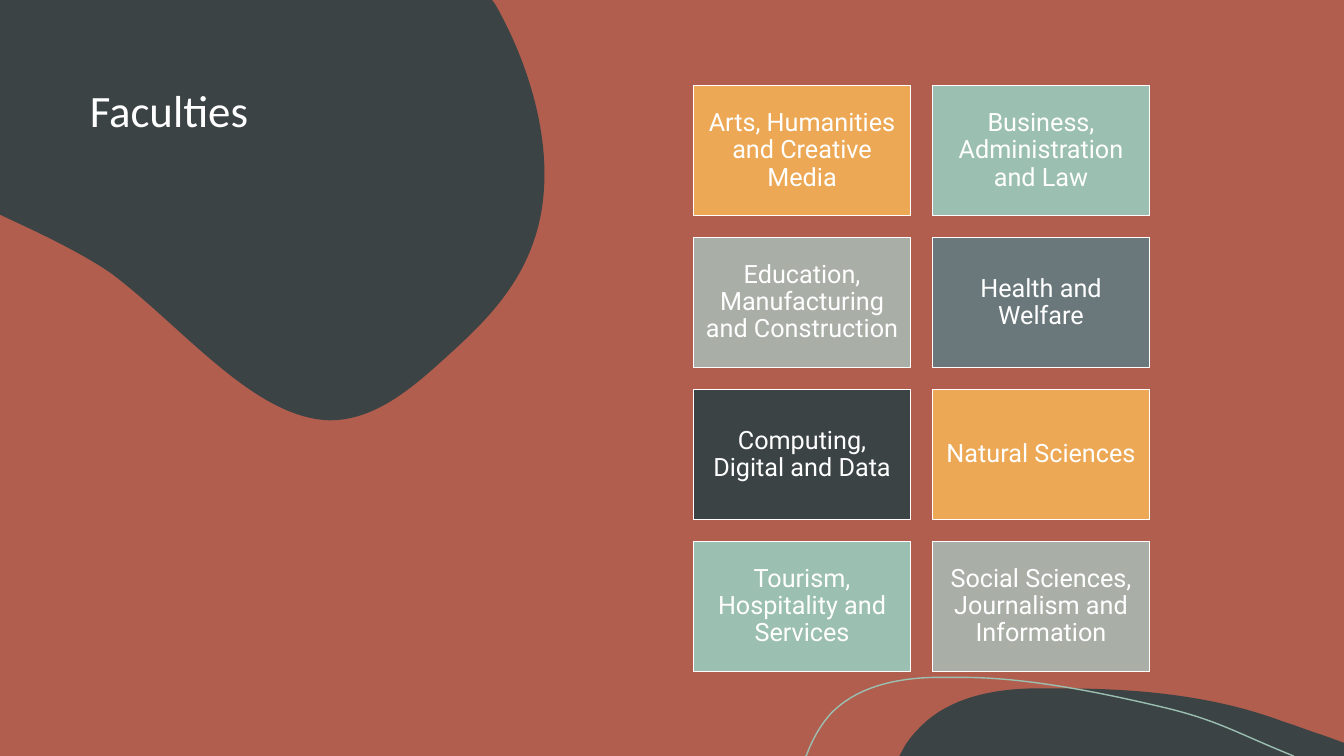
from lxml import etree
from pptx import Presentation
from pptx.dml.color import RGBColor
from pptx.enum.shapes import MSO_SHAPE
from pptx.enum.text import MSO_ANCHOR, PP_ALIGN
from pptx.oxml.ns import qn
from pptx.util import Inches, Pt

RECTANGLE = MSO_SHAPE.RECTANGLE
TOP, MIDDLE = MSO_ANCHOR.TOP, MSO_ANCHOR.MIDDLE
LEFT, CENTER = PP_ALIGN.LEFT, PP_ALIGN.CENTER

COLORS = {
    "rust": "B15E4E",
    "charcoal": "3B4345",
    "orange": "ECA855",
    "mint": "9BBFB0",
    "gray": "A9AEA7",
    "slate": "6A787C",
    "white": "FFFFFF",
}

FACULTIES = [
    ("Arts, Humanities and Creative Media", "orange"),
    ("Business, Administration and Law", "mint"),
    ("Education, Manufacturing and Construction", "gray"),
    ("Health and Welfare", "slate"),
    ("Computing, Digital and Data", "charcoal"),
    ("Natural Sciences", "orange"),
    ("Tourism, Hospitality and Services", "mint"),
    ("Social Sciences, Journalism and Information", "gray"),
]
COLUMNS = 2
CARD_LEFT, CARD_TOP = 6.88, 0.85
CARD_WIDTH, CARD_HEIGHT = 2.15, 1.29
COLUMN_STEP = 2.37
ROW_STEP = (5.37 - CARD_TOP) / 3
PAGE_WIDTH, PAGE_HEIGHT = 13.33, 7.5

# Outlines in inches: a pair is a corner, six numbers are a Bezier curve.
TOP_BLOB = [
    (0, 0),
    (4.88, 0),
    (4.91, 0.04),
    (5.23, 0.6, 5.45, 1.31, 5.39, 1.94),
    (5.32, 2.7, 4.86, 3.15, 4.44, 3.53),
    (4.09, 3.85, 3.72, 4.17, 3.27, 4.17),
    (2.52, 4.15, 1.82, 3.25, 1.1, 2.71),
    (0.88, 2.56, 0.61, 2.42, 0.32, 2.28),
    (0, 2.13),
    (0, 0),
]
BOTTOM_BLOB = [
    (10.54, 6.83),
    (11.28, 6.83, 12.04, 6.9, 12.73, 7.16),
    (12.86, 7.2, 12.98, 7.25, 13.11, 7.29),
    (13.33, 7.37),
    (13.33, 7.5),
    (8.92, 7.5),
    (8.98, 7.39),
    (9.02, 7.33, 9.06, 7.28, 9.11, 7.23),
    (9.39, 6.93, 9.82, 6.84, 10.23, 6.83),
    (10.33, 6.83, 10.43, 6.83, 10.54, 6.83),
]
BOTTOM_WAVE = [
    (7.99, 7.5),
    (8, 7.49),
    (8.06, 7.33, 8.14, 7.19, 8.24, 7.08),
    (8.5, 6.81, 8.89, 6.73, 9.26, 6.72),
    (9.55, 6.72),
    (10.22, 6.72, 11, 6.89, 11.55, 7.02),
    (12.09, 7.15, 12.26, 7.27, 12.83, 7.5),
]


def color(name):
    return RGBColor.from_string(COLORS[name])


def bend(shape, outline):
    """Turn the straight segments that stand for Bezier curves into curves."""
    lines = list(shape.element.iter(qn("a:lnTo")))
    for line, segment in zip(lines, outline[1:]):
        if len(segment) == 2:
            continue
        curve = etree.Element(qn("a:cubicBezTo"))
        for x, y in zip(segment[::2], segment[1::2]):
            point = etree.SubElement(curve, qn("a:pt"))
            point.set("x", str(Inches(x) - shape.left))
            point.set("y", str(Inches(y) - shape.top))
        line.getparent().replace(line, curve)


def add_outline(page, outline, close):
    points = [(Inches(segment[-2]), Inches(segment[-1])) for segment in outline]
    builder = page.shapes.build_freeform(*points[0])
    builder.add_line_segments(points[1:], close=close)
    shape = builder.convert_to_shape()
    shape.shadow.inherit = False
    bend(shape, outline)
    return shape


def add_blob(page, outline):
    blob = add_outline(page, outline, True)
    blob.fill.solid()
    blob.fill.fore_color.rgb = color("charcoal")
    blob.line.fill.background()


def add_wave(page, outline):
    wave = add_outline(page, outline, False)
    wave.fill.background()
    wave.line.color.rgb = color("mint")
    wave.line.width = Pt(1)


def add_rectangle(page, left, top, width, height, fill):
    rectangle = page.shapes.add_shape(
        RECTANGLE, Inches(left), Inches(top), Inches(width), Inches(height)
    )
    rectangle.shadow.inherit = False
    rectangle.fill.solid()
    rectangle.fill.fore_color.rgb = color(fill)
    rectangle.line.fill.background()
    return rectangle


def write(frame, text, font_name, size, align, anchor):
    frame.word_wrap = True
    frame.vertical_anchor = anchor
    para = frame.paragraphs[0]
    para.text = text
    para.alignment = align
    para.line_spacing = 0.9
    para.font.name = font_name
    para.font.size = Pt(size)
    para.font.color.rgb = color("white")


def place_title(page, text):
    """Fill the title and bring it in front of the shapes drawn so far."""
    title = page.shapes.title
    title.left, title.top = Inches(0.79), Inches(0.83)
    title.width, title.height = Inches(4.21), Inches(2.5)
    write(title.text_frame, text, "Calibri", 32, LEFT, TOP)
    title.element.getparent().append(title.element)


def add_card(page, left, top, text, fill):
    card = add_rectangle(page, left, top, CARD_WIDTH, CARD_HEIGHT, fill)
    card.line.color.rgb = color("white")
    card.line.width = Pt(1)
    frame = card.text_frame
    frame.margin_left = frame.margin_right = Inches(0.07)
    frame.margin_top = frame.margin_bottom = Inches(0.07)
    write(frame, text, "Roboto", 18, CENTER, MIDDLE)


def main():
    deck = Presentation()
    deck.slide_width, deck.slide_height = Inches(PAGE_WIDTH), Inches(PAGE_HEIGHT)
    page = deck.slides.add_slide(deck.slide_layouts.get_by_name("Title Only"))
    page.background.fill.solid()
    page.background.fill.fore_color.rgb = color("rust")

    add_rectangle(page, 0, 0, PAGE_WIDTH, PAGE_HEIGHT, "rust")
    add_blob(page, TOP_BLOB)
    place_title(page, "Faculties")
    add_blob(page, BOTTOM_BLOB)
    add_wave(page, BOTTOM_WAVE)
    for index, (name, fill) in enumerate(FACULTIES):
        row, column = divmod(index, COLUMNS)
        add_card(page, CARD_LEFT + column * COLUMN_STEP, CARD_TOP + row * ROW_STEP, name, fill)

    deck.save("out.pptx")


if __name__ == "__main__":
    main()
